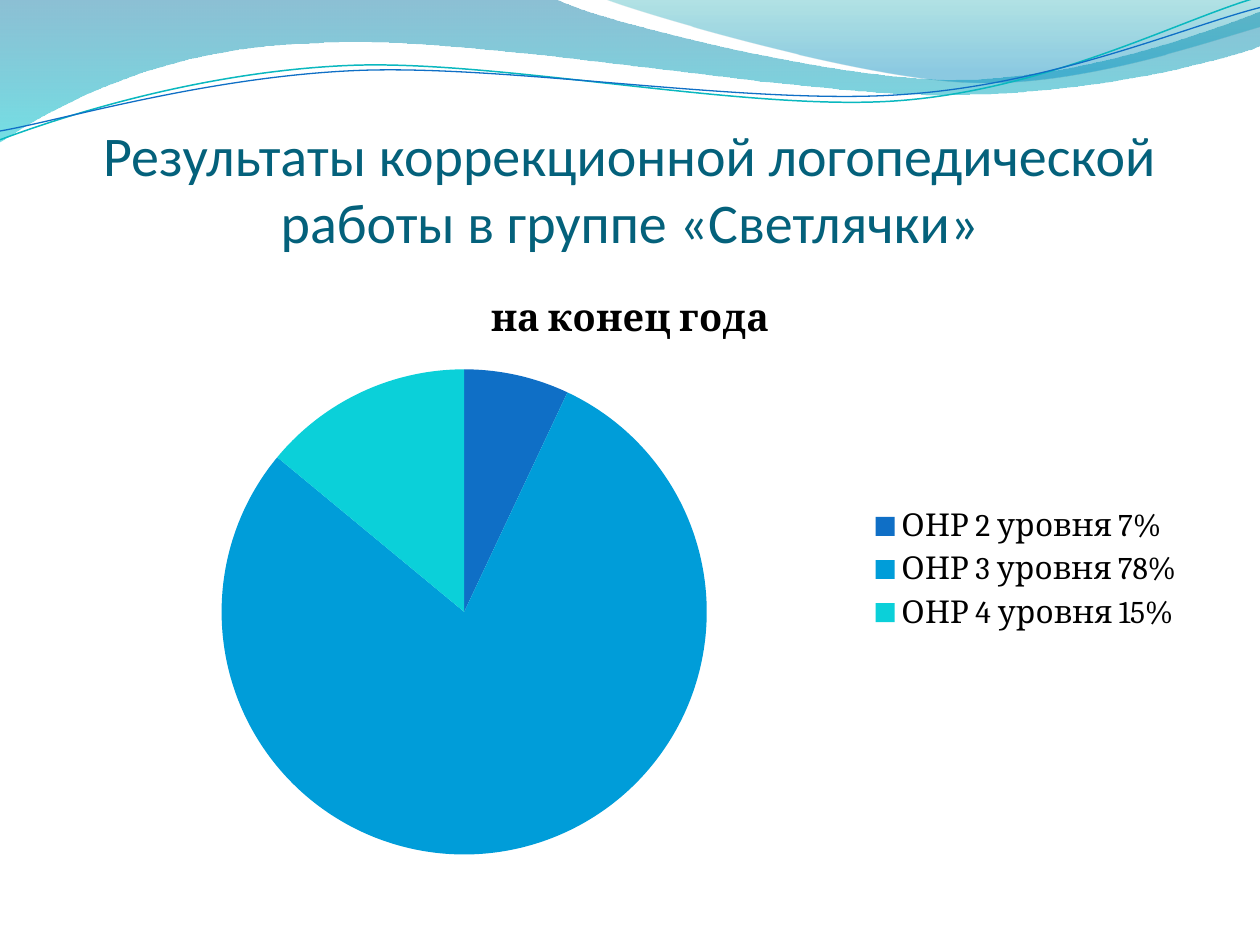
from dataclasses import dataclass
from itertools import chain
from typing import Optional

from lxml.etree import SubElement
from pptx import Presentation
from pptx.chart.data import CategoryChartData
from pptx.dml.color import RGBColor
from pptx.enum.chart import XL_CHART_TYPE as ChartType, XL_LEGEND_POSITION as LegendPos
from pptx.enum.text import MSO_ANCHOR as Anchor, PP_ALIGN as Align
from pptx.oxml.ns import qn
from pptx.util import Inches, Pt

W, H = Inches(10), Inches(7.5)
CELL = W // 1000  # everything lies on a grid of 1000 columns by 750 rows

COLORS = {
    "title": "04617B", "text": "000000",
    "deep": "0074A1", "cyan": "00C6CF", "teal": "00A1A9", "sky": "008BBF",
    "teal line": "0AB8BF", "blue line": "0F6FC6",
    "level 2": "0F6FC6", "level 3": "009DD9", "level 4": "0BD0D9",
}

Point = tuple[int, int]


@dataclass
class Stop:
    position: float
    color: str
    alpha: int


@dataclass
class Wave:
    """Segments hold one point for a line and three for a Bezier curve."""
    start: Point
    segments: list[list[Point]]
    stops: Optional[list[Stop]] = None
    line: Optional[str] = None
    width: float = 0.75


@dataclass
class Slice:
    label: str
    value: int
    color: str


WAVES = [
    Wave((0, -1), [
        [(440, -1)],
        [(476, 17), (664, 63), (758, 63)],
        [(853, 63), (958, 26), (1000, 9)],
        [(1001, 36)],
        [(983, 44), (870, 76), (746, 75)],
        [(622, 75), (382, 28), (257, 34)],
        [(129, 36), (46, 83), (-1, 113)],
        [(0, -1)],
    ], stops=[Stop(0, "deep", 45), Stop(1, "cyan", 55)]),
    Wave((479, -1), [
        [(509, 11), (682, 62), (769, 65)],
        [(856, 69), (961, 32), (1000, 21)],
        [(1000, 0)],
        [(479, -1)],
    ], stops=[Stop(0, "teal", 30), Stop(0.8, "sky", 45)]),
    Wave((0, 111), [
        [(48, 93), (158, 57), (277, 52)],
        [(395, 47), (593, 89), (713, 80)],
        [(833, 71), (938, 15), (998, -2)],
    ], line="teal line", width=0.85),
    Wave((0, 104), [
        [(47, 96), (164, 61), (283, 56)],
        [(403, 51), (597, 84), (717, 75)],
        [(836, 67), (941, 21), (1000, 6)],
    ], line="blue line"),
]

SLICES = [
    Slice("ОНР 2 уровня 7%", 7, "level 2"),
    Slice("ОНР 3 уровня 78%", 79, "level 3"),
    Slice("ОНР 4 уровня 15%", 14, "level 4"),
]


def rgb(name: str) -> RGBColor:
    return RGBColor.from_string(COLORS[name])


def box(*cells: int) -> list[int]:
    """Turn left, top, width and height in grid cells into lengths."""
    return [n * CELL for n in cells]


def fill_gradient(sp, stops: list[Stop]) -> None:
    """Fill from top to bottom with translucent colours."""
    sp.fill.gradient()
    sp.fill.gradient_angle = 270
    for gs, stop in zip(sp.fill.gradient_stops, stops):
        gs.color.rgb = rgb(stop.color)
        gs.position = stop.position
    colors = sp.element.spPr.find(qn("a:gradFill")).iter(qn("a:srgbClr"))
    for clr, stop in zip(list(colors), stops):
        SubElement(clr, qn("a:alpha"), val=str(stop.alpha * 1000))


def bend(sp, segments: list[list[Point]]) -> None:
    """Join the three line pieces of each curve into one Bezier."""
    pieces = iter(list(sp.element.iter(qn("a:lnTo"))))
    for seg in segments:
        first, *others = [next(pieces) for _ in seg]
        if others:
            curve = first.makeelement(qn("a:cubicBezTo"))
            first.addprevious(curve)
            for piece in (first, *others):
                curve.append(piece[0])
                piece.getparent().remove(piece)


def add_wave(slide, wave: Wave) -> None:
    builder = slide.shapes.build_freeform(*wave.start, scale=CELL)
    builder.add_line_segments(chain.from_iterable(wave.segments),
                              close=wave.stops is not None)
    sp = builder.convert_to_shape()
    bend(sp, wave.segments)
    sp.shadow.inherit = False
    if wave.stops:
        fill_gradient(sp, wave.stops)
    else:
        sp.fill.background()
    if wave.line:
        sp.line.color.rgb = rgb(wave.line)
        sp.line.width = Pt(wave.width)
    else:
        sp.line.fill.background()


def write(tf, text: str, *, size: float, font: str, color: str,
          bold: bool = False, align: Align = Align.CENTER) -> None:
    p = tf.paragraphs[0]
    p.alignment = align
    r = p.add_run()
    r.text = text
    r.font.size, r.font.name, r.font.bold = Pt(size), font, bold
    r.font.color.rgb = rgb(color)


def add_title(slide, text: str) -> None:
    tf = slide.shapes.add_textbox(*box(50, 77, 900, 125)).text_frame
    tf.word_wrap = True
    tf.vertical_anchor = Anchor.BOTTOM
    tf.margin_left = tf.margin_right = tf.margin_bottom = 0
    tf.margin_top = Inches(0.05)
    write(tf, text, size=32, font="Calibri", color="title")


def add_pie(slide, title: str, slices: list[Slice]) -> None:
    data = CategoryChartData()
    data.categories = [s.label for s in slices]
    data.add_series(title, [s.value for s in slices])
    chart = slide.shapes.add_chart(
        ChartType.PIE, *box(50, 212, 900, 480), data).chart
    chart.font.size, chart.font.name = Pt(18), "Cambria"
    chart.font.color.rgb = rgb("text")
    chart.has_title = True
    write(chart.chart_title.text_frame, title, size=21.6, font="Cambria",
          color="text", bold=True)
    chart.has_legend = True
    chart.legend.position = LegendPos.RIGHT
    chart.legend.include_in_layout = False
    plot = chart.plots[0]
    plot.vary_by_categories = True
    for i, s in enumerate(slices):
        fmt = plot.series[0].points[i].format
        fmt.fill.solid()
        fmt.fill.fore_color.rgb = rgb(s.color)
        fmt.line.fill.background()


def main() -> None:
    prs = Presentation()
    prs.slide_width, prs.slide_height = W, H
    slide = prs.slides.add_slide(prs.slide_layouts[6])
    for wave in WAVES:
        add_wave(slide, wave)
    add_title(slide, "Результаты коррекционной логопедической работы "
                     "в группе «Светлячки»")
    add_pie(slide, "на конец года", SLICES)
    prs.save("out.pptx")


if __name__ == "__main__":
    main()
